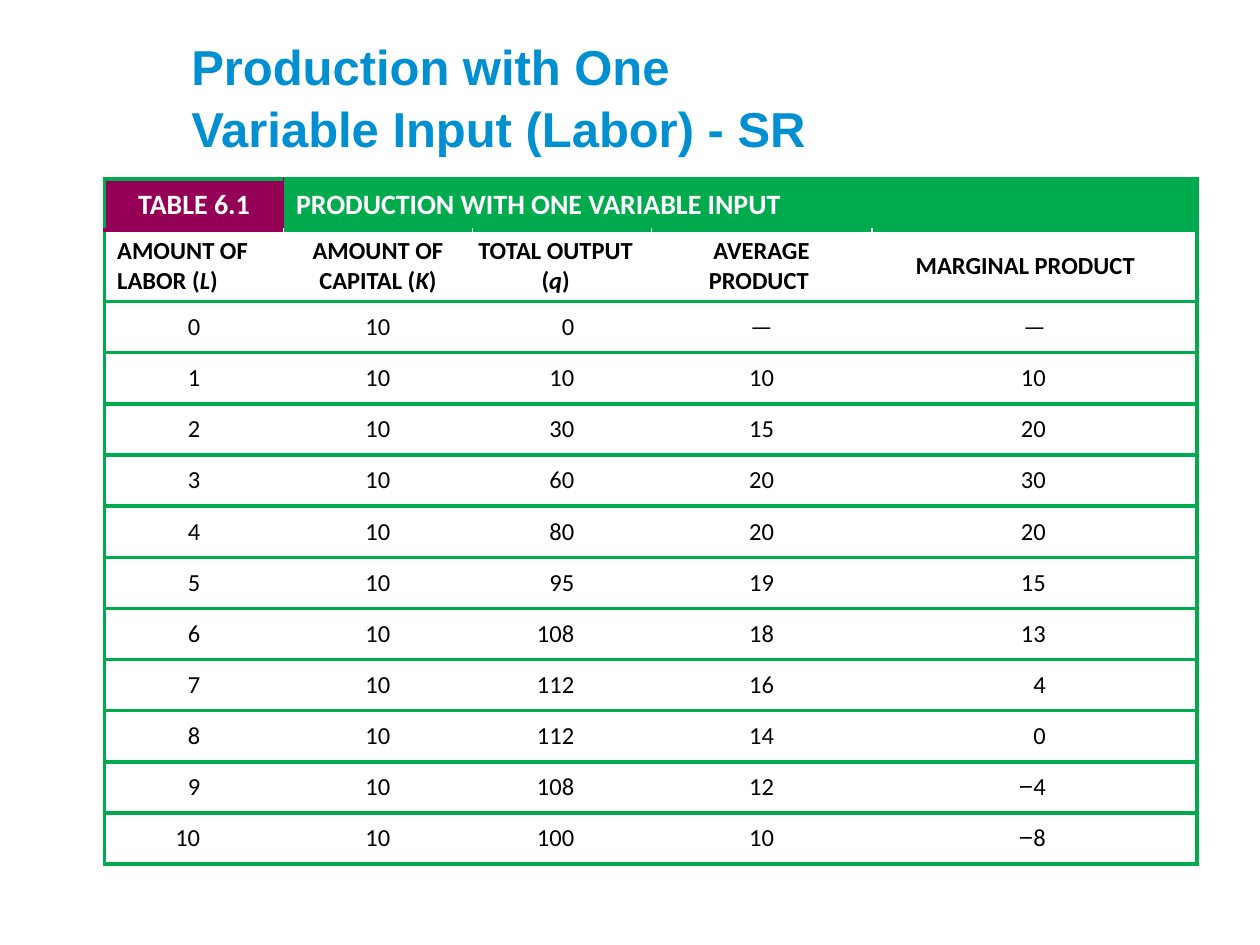
from lxml import etree
from pptx import Presentation
from pptx.dml.color import RGBColor
from pptx.enum.text import MSO_ANCHOR, PP_ALIGN
from pptx.oxml.ns import qn
from pptx.util import Inches, Pt

LEFT, CENTER, RIGHT = PP_ALIGN.LEFT, PP_ALIGN.CENTER, PP_ALIGN.RIGHT
MIDDLE = MSO_ANCHOR.MIDDLE

BLUE, GREEN, PURPLE = "008FD0", "00AB4E", "950057"
WHITE, BLACK = "FFFFFF", "000000"
THIN, THICK = 1, 2.25

COLUMN_WIDTHS = [1.42, 1.5, 1.42, 1.75, 2.58]
HEADERS = [
    ["AMOUNT OF LABOR (", "L", ")"],
    ["AMOUNT OF CAPITAL (", "K", ")"],
    ["TOTAL OUTPUT (", "q", ")"],
    ["AVERAGE PRODUCT "],
    ["MARGINAL PRODUCT "],
]
OUTPUT = [0, 10, 30, 60, 80, 95, 108, 112, 112, 108, 100]
AVERAGE = ["—", 10, 15, 20, 20, 19, 18, 16, 14, 12, 10]
MARGINAL = ["—", 10, 20, 30, 20, 15, 13, 4, 0, "−4", "−8"]
OUTPUT_INSETS = {1: (0.2, 0.1), 2: (0, 0), 3: (0, 0.1)}


def rgb(value):
    return RGBColor.from_string(value)


class SlideBuilder:
    """Holds the text style and the current slide."""

    def __init__(self, slide, title_font, table_font):
        self.s = slide
        self.title_font = title_font
        self.table_font = table_font

    def format_run(self, r, font, size, color, bold=False, italic=False):
        r.font.name = font
        r.font.size = Pt(size)
        r.font.color.rgb = rgb(color)
        r.font.bold = bold
        r.font.italic = italic

    def title(self, text, left, top, width, height):
        tf = self.s.shapes.add_textbox(
            Inches(left), Inches(top), Inches(width), Inches(height)).text_frame
        tf.word_wrap = True
        p = tf.paragraphs[0]
        p.text = text
        p.line_spacing = 1.05
        for r in p.runs:
            self.format_run(r, self.title_font, 28, BLUE, bold=True)

    def table(self, rows, widths, left, top, height):
        table = self.s.shapes.add_table(
            rows, len(widths), Inches(left), Inches(top),
            Inches(sum(widths)), Inches(height)).table
        table.first_row = table.horz_banding = False
        for column, width in zip(table.columns, widths):
            column.width = Inches(width)
        return table

    def borders(self, cell, **sides):
        tc_pr = cell._tc.get_or_add_tcPr()
        for side in "LRTB":
            color, width = sides[side]
            ln = etree.SubElement(tc_pr, qn(f"a:ln{side}"), w=str(Pt(width)))
            fill = etree.SubElement(ln, qn("a:solidFill"))
            etree.SubElement(fill, qn("a:srgbClr"), val=color)

    def cell(self, cell, parts, size=14, color=BLACK, bold=False,
             align=CENTER, fill=None, insets=(0.1, 0.1)):
        cell.vertical_anchor = MIDDLE
        cell.margin_left, cell.margin_right = map(Inches, insets)
        p = cell.text_frame.paragraphs[0]
        p.alignment = align
        for i, part in enumerate(parts):
            r = p.add_run()
            r.text = part
            font = self.title_font if part == "−" else self.table_font
            self.format_run(r, font, size, color, bold, italic=i == 1 and bold)
        if fill:
            cell.fill.solid()
            cell.fill.fore_color.rgb = rgb(fill)
        else:
            cell.fill.background()


def draw_borders(b, table):
    last = len(COLUMN_WIDTHS) - 1
    green, white = (GREEN, THICK), (WHITE, THIN)
    for row in range(len(table.rows)):
        for col in range(last + 1):
            inner = green if row == 0 else white
            sides = {"L": green if col == 0 else inner,
                     "R": green if col == last else inner,
                     "T": green, "B": green}
            if row == 0 and col == 0:
                sides.update(R=(PURPLE, THIN), B=(PURPLE, THICK))
            elif row == 0 and col == 1:
                sides["L"] = (PURPLE, THIN)
            elif row == 1 and col == 0:
                sides["T"] = (PURPLE, THICK)
            b.borders(table.cell(row, col), **sides)


def fill_data(b, table):
    for labor, values in enumerate(zip(OUTPUT, AVERAGE, MARGINAL)):
        texts = [str(v) for v in (labor, 10, *values)]
        for col, text in enumerate(texts):
            align, insets = CENTER, (0.1, 0.1)
            if col == 0 and len(text) == 2:
                insets = (0.1, 0.2)
            elif col == 2:
                insets = OUTPUT_INSETS[len(text)]
            elif col == 4 and text != "—":
                align, insets = RIGHT, (0, 1.2)
            parts = ["−", text[1:]] if text.startswith("−") else [text]
            b.cell(table.cell(labor + 2, col), parts, align=align,
                   fill=WHITE, insets=insets)


def main():
    prs = Presentation()
    prs.slide_width, prs.slide_height = Inches(10), Inches(7.5)
    b = SlideBuilder(prs.slides.add_slide(prs.slide_layouts[6]), "Arial", "Calibri")

    b.title("Production with One\nVariable Input (Labor) - SR", 1.42, 0.22, 8, 0.53)

    table = b.table(len(OUTPUT) + 2, COLUMN_WIDTHS, 0.83, 1.42, 5.28)
    draw_borders(b, table)
    table.cell(0, 1).merge(table.cell(0, 4))
    b.cell(table.cell(0, 0), ["TABLE 6.1"], 16, WHITE, True, fill=PURPLE)
    b.cell(table.cell(0, 1), ["PRODUCTION WITH ONE VARIABLE INPUT"],
           16, WHITE, True, LEFT, GREEN)
    for col, parts in enumerate(HEADERS):
        b.cell(table.cell(1, col), parts, bold=True,
               align=LEFT if col == 0 else CENTER,
               insets=(0 if col in (2, 4) else 0.1, 0.1))
    fill_data(b, table)

    prs.save("out.pptx")


if __name__ == "__main__":
    main()
